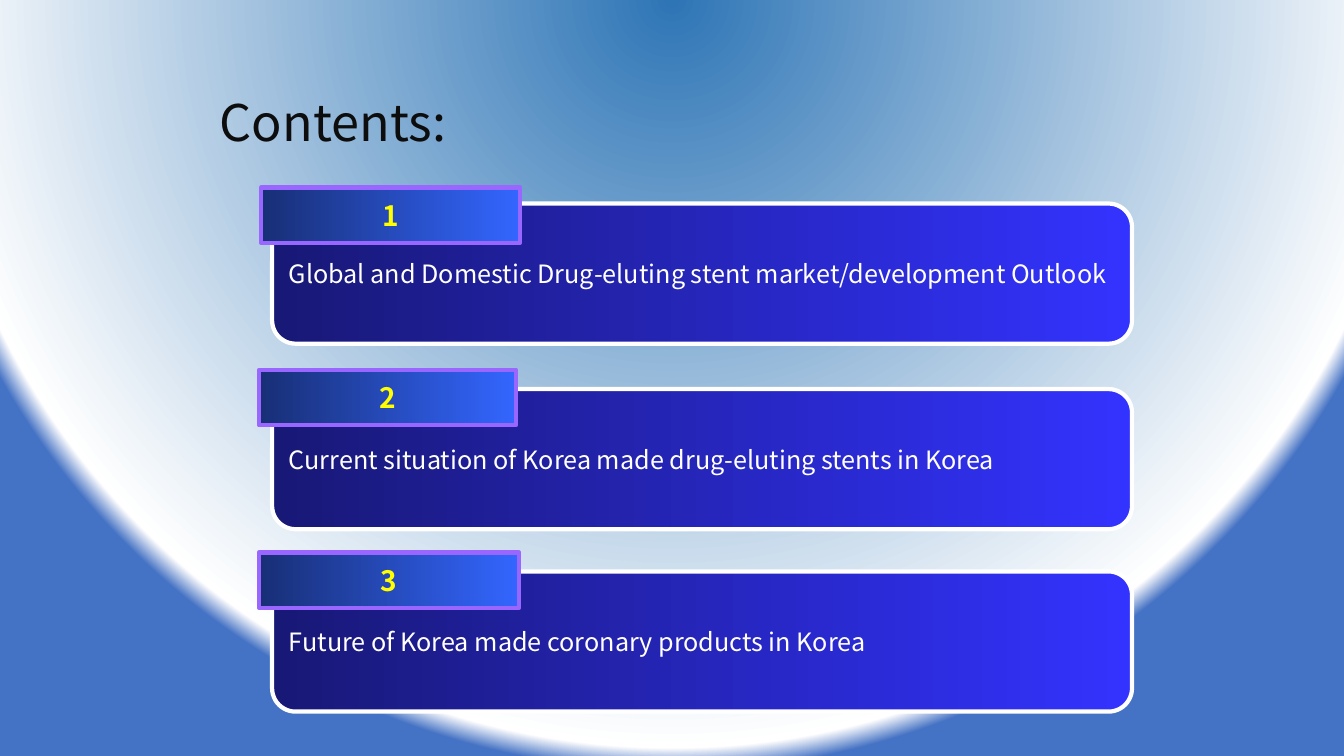
import copy
import pptx
import pptx.dml.color
import pptx.enum.shapes
import pptx.enum.text
import pptx.oxml
import pptx.oxml.ns
import pptx.util

Pt = pptx.util.Pt
SHAPE = pptx.enum.shapes.MSO_SHAPE
ALIGN = pptx.enum.text.PP_ALIGN
ANCHOR = pptx.enum.text.MSO_ANCHOR
qn = pptx.oxml.ns.qn

# Content: card text, card top, tag left, tag top, tag width
TITLE = "Contents:"
TOPICS = [
    ("Global and Domestic Drug-eluting stent market/development Outlook",
     145.4, 186.5, 133.9, 185),
    ("Current situation of Korea made drug-eluting stents in Korea",
     277.9, 185, 264.2, 183.6),
    ("Future of Korea made coronary products in Korea",
     408.2, 185, 394.6, 185.8),
]

# Style
FONT = "Noto Sans CJK KR"
BACKDROP = [(0, "2E75B6"), (0.97, "FFFFFF"), (1, "4472C4")]
CARD_FILL = [(0, "181876"), (1, "3333FF")]
TAG_FILL = [(0, "182F76"), (1, "3366FF")]
CARD_LEFT, CARD_W, CARD_H, TAG_H = 194.4, 614.2, 100.1, 39.6


def rgb(color):
    return pptx.dml.color.RGBColor.from_string(color)


def set_stops(fill, stops):
    for stop, (position, color) in zip(fill.gradient_stops, stops):
        stop.position = position
        stop.color.rgb = rgb(color)


def write(tf, text, size, color, align=ALIGN.LEFT, bold=False):
    p = tf.paragraphs[0]
    p.alignment = align
    r = p.add_run()
    r.text = text
    r.font.size = Pt(size)
    r.font.name = FONT
    r.font.bold = bold
    r.font.color.rgb = rgb(color)
    ea = pptx.oxml.parse_xml(
        f'<a:ea {pptx.oxml.ns.nsdecls("a")} typeface="{FONT}"/>')
    r.font._element.find(qn("a:latin")).addnext(ea)


def add_box(s, kind, left, top, width, height, stops, line, wrap):
    sp = s.shapes.add_shape(kind, Pt(left), Pt(top), Pt(width), Pt(height))
    sp.shadow.inherit = False
    sp.fill.gradient()
    sp.fill.gradient_angle = 0
    set_stops(sp.fill, stops)
    sp.line.color.rgb = rgb(line)
    sp.line.width = Pt(3)
    tf = sp.text_frame
    tf.word_wrap = wrap
    tf.vertical_anchor = ANCHOR.MIDDLE
    return tf


def set_backdrop(s):
    fill = s.background.fill
    fill.gradient()
    grad = s.element.find(".//" + qn("a:gradFill"))
    stops = grad.find(qn("a:gsLst"))
    stops.append(copy.deepcopy(stops[-1]))
    set_stops(fill, BACKDROP)
    circle = pptx.oxml.parse_xml(
        f'<a:path {pptx.oxml.ns.nsdecls("a")} path="circle">'
        '<a:fillToRect l="50000" t="-80000" r="50000" b="180000"/></a:path>')
    grad.replace(grad.find(qn("a:lin")), circle)


def main():
    prs = pptx.Presentation()
    prs.slide_width, prs.slide_height = Pt(960), Pt(540)
    s = prs.slides.add_slide(prs.slide_layouts[5])
    set_backdrop(s)

    # Title
    title = s.shapes.title
    title.left, title.top = Pt(149.8), Pt(61.2)
    title.width, title.height = Pt(218.9), Pt(51.1)
    tf = title.text_frame
    tf.word_wrap = True
    tf.auto_size = pptx.enum.text.MSO_AUTO_SIZE.SHAPE_TO_FIT_TEXT
    tf.vertical_anchor = ANCHOR.TOP
    write(tf, TITLE, 36, "0D0D0D")

    # Cards, each with a numbered tag over its top left corner
    for number, (text, top, tag_left, tag_top, tag_w) in enumerate(TOPICS, 1):
        tf = add_box(s, SHAPE.ROUNDED_RECTANGLE, CARD_LEFT, top, CARD_W,
                     CARD_H, CARD_FILL, "FFFFFF", False)
        write(tf, text, 18, "FFFFFF")
        tf = add_box(s, SHAPE.RECTANGLE, tag_left, tag_top, tag_w, TAG_H,
                     TAG_FILL, "9966FF", True)
        write(tf, str(number), 20, "FFFF00", ALIGN.CENTER, True)

    prs.save("out.pptx")


if __name__ == "__main__":
    main()
